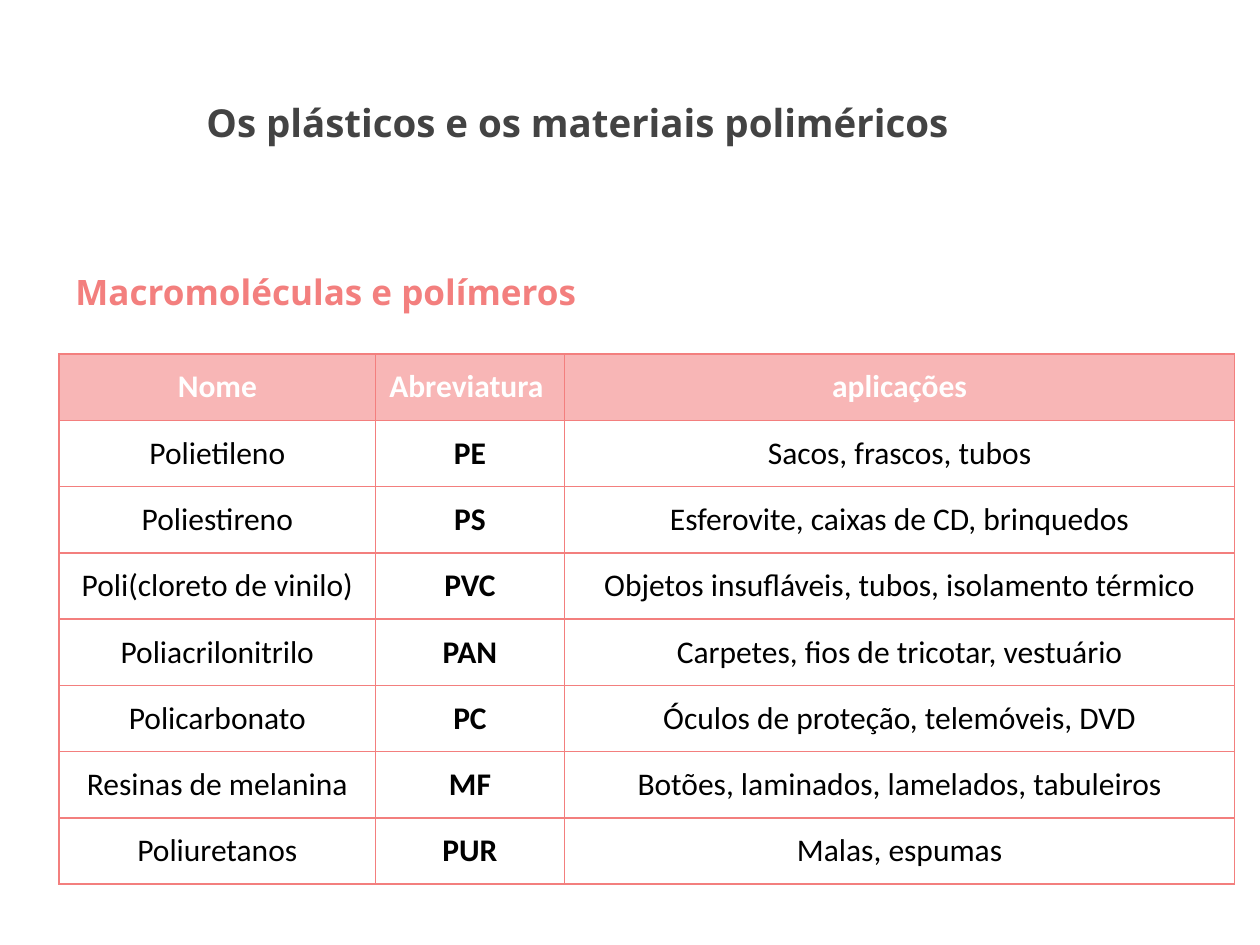
import pptx
import pptx.dml.color
import pptx.enum.text
import pptx.oxml
import pptx.oxml.ns
import pptx.util
from pptx.util import Inches

HEADINGS = [
    ("Os plásticos e os materiais poliméricos", (1.54, 0.74, 6.51, 0.47), 22, "434343"),
    ("Macromoléculas e polímeros", (0.5, 2.1, 4.39, 0.44), 20, "F37F7E"),
]
ROWS = [
    ("Nome", "Abreviatura ", "aplicações"),
    ("Polietileno", "PE", "Sacos, frascos, tubos"),
    ("Poliestireno", "PS", "Esferovite, caixas de CD, brinquedos"),
    ("Poli(cloreto de vinilo)", "PVC", "Objetos insufláveis, tubos, isolamento térmico"),
    ("Poliacrilonitrilo", "PAN", "Carpetes, fios de tricotar, vestuário"),
    ("Policarbonato", "PC", "Óculos de proteção, telemóveis, DVD"),
    ("Resinas de melanina", "MF", "Botões, laminados, lamelados, tabuleiros"),
    ("Poliuretanos", "PUR", "Malas, espumas"),
]
COLUMN_WIDTHS = (2.51, 1.5, 5.32)
TABLE_LEFT, TABLE_TOP, TABLE_HEIGHT = 0.47, 2.81, 4.21
BORDER_COLOR, HEADER_COLOR = "F37F7E", "F8B6B6"


def color(value):
    return pptx.dml.color.RGBColor.from_string(value)


def write_text(frame, text, *, size, font, fill, bold=False, align=pptx.enum.text.PP_ALIGN.LEFT):
    paragraph = frame.paragraphs[0]
    paragraph.alignment = align
    run = paragraph.add_run()
    run.text = text
    run.font.size = pptx.util.Pt(size)
    run.font.name = font
    run.font.bold = bold
    run.font.color.rgb = color(fill)


def add_borders(cell):
    properties = cell._tc.get_or_add_tcPr()
    for position, side in enumerate(("lnL", "lnR", "lnT", "lnB")):
        line = pptx.oxml.parse_xml(
            f'<a:{side} {pptx.oxml.ns.nsdecls("a")} w="{pptx.util.Pt(1)}">'
            f'<a:solidFill><a:srgbClr val="{BORDER_COLOR}"/></a:solidFill></a:{side}>'
        )
        properties.insert(position, line)


def add_heading(slide, text, box, size, fill):
    shape = slide.shapes.add_textbox(*map(Inches, box))
    frame = shape.text_frame
    frame.word_wrap = False
    frame.auto_size = pptx.enum.text.MSO_AUTO_SIZE.SHAPE_TO_FIT_TEXT
    write_text(frame, text, size=size, font="Open Sans", fill=fill, bold=True)


def add_polymer_table(slide):
    table = slide.shapes.add_table(
        len(ROWS), len(COLUMN_WIDTHS), Inches(TABLE_LEFT), Inches(TABLE_TOP),
        Inches(sum(COLUMN_WIDTHS)), Inches(TABLE_HEIGHT),
    ).table
    table.horz_banding = False
    for column, width in zip(table.columns, COLUMN_WIDTHS):
        column.width = Inches(width)
    for row_index, row in enumerate(ROWS):
        header = row_index == 0
        for column_index, text in enumerate(row):
            cell = table.cell(row_index, column_index)
            cell.vertical_anchor = pptx.enum.text.MSO_ANCHOR.MIDDLE
            if header:
                cell.fill.solid()
                cell.fill.fore_color.rgb = color(HEADER_COLOR)
            else:
                cell.fill.background()
            add_borders(cell)
            write_text(
                cell.text_frame, text, size=18, font="Calibri",
                fill="FFFFFF" if header else "000000",
                bold=header or column_index == 1,
                align=pptx.enum.text.PP_ALIGN.CENTER,
            )


def main():
    presentation = pptx.Presentation()
    presentation.slide_width = Inches(10)
    presentation.slide_height = Inches(7.5)
    slide = presentation.slides.add_slide(presentation.slide_layouts[6])
    for heading in HEADINGS:
        add_heading(slide, *heading)
    add_polymer_table(slide)
    presentation.save("out.pptx")


if __name__ == "__main__":
    main()
